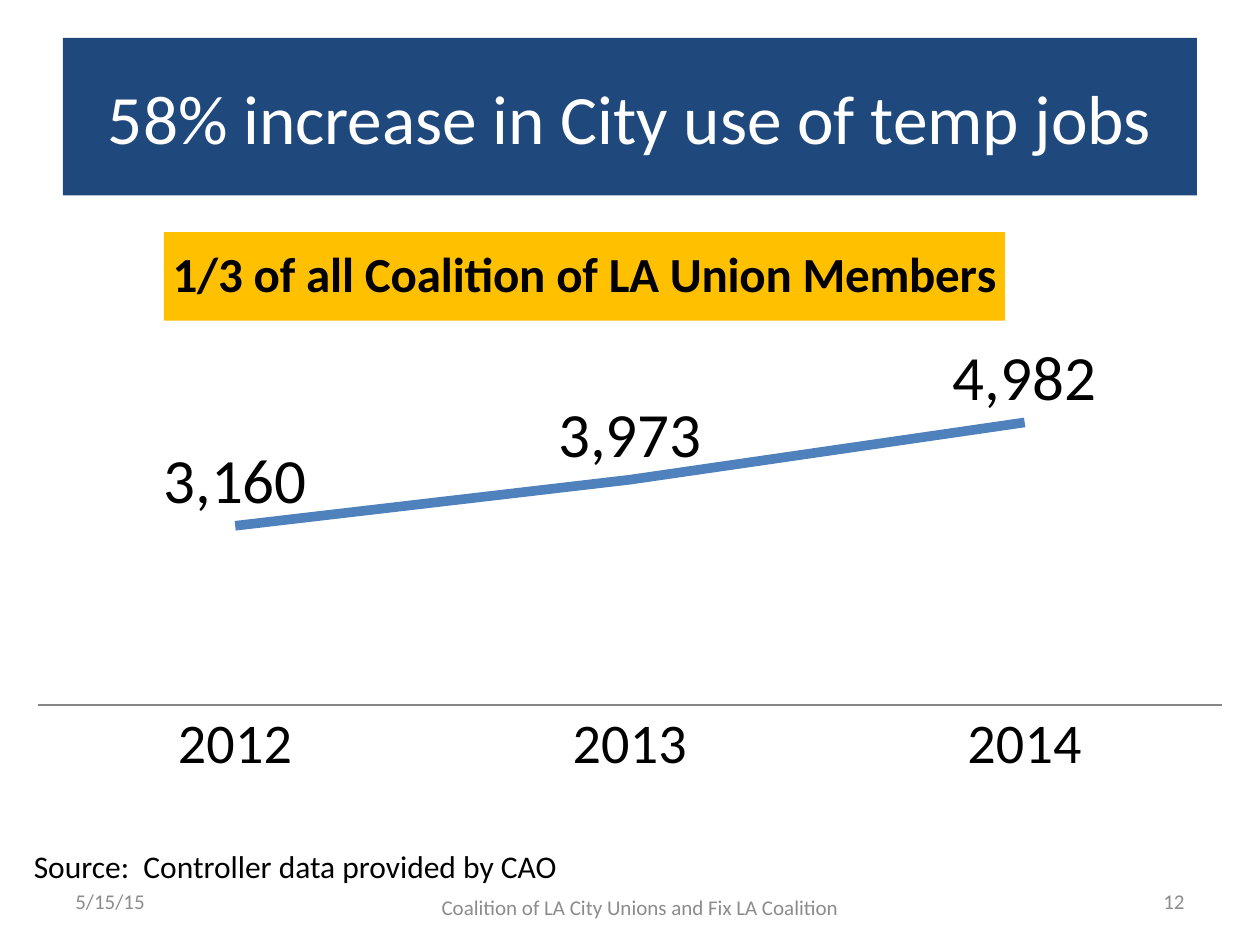
from dataclasses import dataclass

import lxml.etree
import pptx
import pptx.chart.data
import pptx.dml.color
import pptx.enum.chart
import pptx.enum.shapes
import pptx.enum.text
import pptx.oxml.ns
import pptx.util

WIDTH, HEIGHT = 10, 7.5
MARGIN = 0.05 * WIDTH
FOOTER_TOP = 6.95
FOOTER_HEIGHT = 0.4

ALIGN = pptx.enum.text.PP_ALIGN
ANCHOR = pptx.enum.text.MSO_ANCHOR


@dataclass(frozen=True)
class Theme:
    font: str = "Calibri"
    banner: str = "1F497D"
    banner_text: str = "FFFFFF"
    highlight: str = "FFC000"
    text: str = "000000"
    muted: str = "8C8C8C"
    series: str = "4F81BD"
    axis: str = "868686"
    title_size: float = 39.6
    label_size: float = 36
    axis_size: float = 32
    chart_title_size: float = 28
    body_size: float = 18
    footer_size: float = 12


THEME = Theme()


def color(value):
    return pptx.dml.color.RGBColor.from_string(value)


def box(left, top, width, height):
    return [pptx.util.Inches(length) for length in (left, top, width, height)]


def style_font(font, size, font_color, bold=False):
    font.name = THEME.font
    font.size = pptx.util.Pt(size)
    font.color.rgb = color(font_color)
    font.bold = bold


def write(shape, text, size, font_color, align=ALIGN.LEFT, anchor=ANCHOR.MIDDLE, wrap=True):
    text_frame = shape.text_frame
    text_frame.text = text
    text_frame.word_wrap = wrap
    text_frame.vertical_anchor = anchor
    paragraph = text_frame.paragraphs[0]
    paragraph.alignment = align
    style_font(paragraph.runs[0].font, size, font_color)


def add_banner(slide, text):
    shape = slide.shapes.add_shape(
        pptx.enum.shapes.MSO_SHAPE.RECTANGLE,
        *box(MARGIN, 0.04 * HEIGHT, WIDTH - 2 * MARGIN, HEIGHT / 6),
    )
    shape.shadow.inherit = False
    shape.fill.solid()
    shape.fill.fore_color.rgb = color(THEME.banner)
    shape.line.fill.background()
    write(shape, text, THEME.title_size, THEME.banner_text, ALIGN.CENTER)


def add_text(slide, place, text, size, font_color, **options):
    write(slide.shapes.add_textbox(*box(*place)), text, size, font_color, **options)


def set_layout(parent, index, **settings):
    """Place a chart part by hand, in shares of the chart's size."""
    layout_tag = pptx.oxml.ns.qn("c:layout")
    for old_layout in parent.findall(layout_tag):
        parent.remove(old_layout)
    layout = lxml.etree.Element(layout_tag)
    parent.insert(index, layout)
    manual = lxml.etree.SubElement(layout, pptx.oxml.ns.qn("c:manualLayout"))
    for name, value in settings.items():
        lxml.etree.SubElement(manual, pptx.oxml.ns.qn(f"c:{name}")).set("val", str(value))


def style_chart_title(chart, text):
    title = chart.chart_title
    title.text_frame.text = text
    run = title.text_frame.paragraphs[0].runs[0]
    style_font(run.font, THEME.chart_title_size, THEME.text, bold=True)
    title.format.fill.solid()
    title.format.fill.fore_color.rgb = color(THEME.highlight)
    set_layout(title.format.element if hasattr(title.format, "element") else title._element,
               1, xMode="edge", yMode="edge", x=0.13, y=0.02)


def style_axes(chart):
    category_axis = chart.category_axis
    category_axis.major_tick_mark = pptx.enum.chart.XL_TICK_MARK.NONE
    category_axis.format.line.color.rgb = color(THEME.axis)
    category_axis.format.line.width = pptx.util.Pt(0.75)
    style_font(category_axis.tick_labels.font, THEME.axis_size, THEME.text)
    value_axis = chart.value_axis
    value_axis.minimum_scale = 0
    value_axis.maximum_scale = 6000
    value_axis.has_major_gridlines = False
    value_axis.visible = False


def style_series(series):
    series.smooth = False
    series.marker.style = pptx.enum.chart.XL_MARKER_STYLE.NONE
    series.format.line.color.rgb = color(THEME.series)
    series.format.line.width = pptx.util.Pt(5.5)
    labels = series.data_labels
    labels.show_value = True
    labels.number_format = "#,##0"
    labels.number_format_is_linked = False
    labels.position = pptx.enum.chart.XL_LABEL_POSITION.ABOVE
    style_font(labels.font, THEME.label_size, THEME.text)


def add_line_chart(slide, title, values_by_year):
    data = pptx.chart.data.CategoryChartData(number_format="#,##0")
    data.categories = list(values_by_year)
    data.add_series("Series 1", list(values_by_year.values()))
    chart = slide.shapes.add_chart(
        pptx.enum.chart.XL_CHART_TYPE.LINE, *box(0, 1.75, WIDTH, 4.58), data
    ).chart
    style_font(chart.font, THEME.body_size, THEME.text)
    chart.has_legend = False
    chart.plots[0].vary_by_categories = False
    style_chart_title(chart, title)
    style_axes(chart)
    style_series(chart.plots[0].series[0])
    set_layout(chart._chartSpace.chart.plotArea, 0,
               layoutTarget="inner", xMode="edge", yMode="edge",
               x=0.03, y=0.25, w=0.94, h=0.59)


def add_footer(slide, date, owner, number):
    side = 2.33
    items = [
        (date, MARGIN, FOOTER_TOP, side, ALIGN.LEFT),
        (owner, MARGIN + side, FOOTER_TOP + 0.05, 4.5, ALIGN.CENTER),
        (number, WIDTH - MARGIN - side, FOOTER_TOP, side, ALIGN.RIGHT),
    ]
    for text, left, top, width, align in items:
        add_text(slide, (left, top, width, FOOTER_HEIGHT), text,
                 THEME.footer_size, THEME.muted, align=align)


def main():
    presentation = pptx.Presentation()
    presentation.slide_width = pptx.util.Inches(WIDTH)
    presentation.slide_height = pptx.util.Inches(HEIGHT)
    slide = presentation.slides.add_slide(presentation.slide_layouts[6])

    add_banner(slide, "58% increase in City use of temp jobs")
    add_footer(slide, "5/15/15", "Coalition of LA City Unions and Fix LA Coalition", "12")
    add_line_chart(slide, "1/3 of all Coalition of LA Union Members",
                   {"2012": 3160, "2013": 3973, "2014": 4982})
    add_text(slide, (0.17, 6.67, 4.4, 0.4), "Source:  Controller data provided by CAO",
             THEME.body_size, THEME.text, anchor=ANCHOR.TOP, wrap=False)

    presentation.save("out.pptx")


if __name__ == "__main__":
    main()
